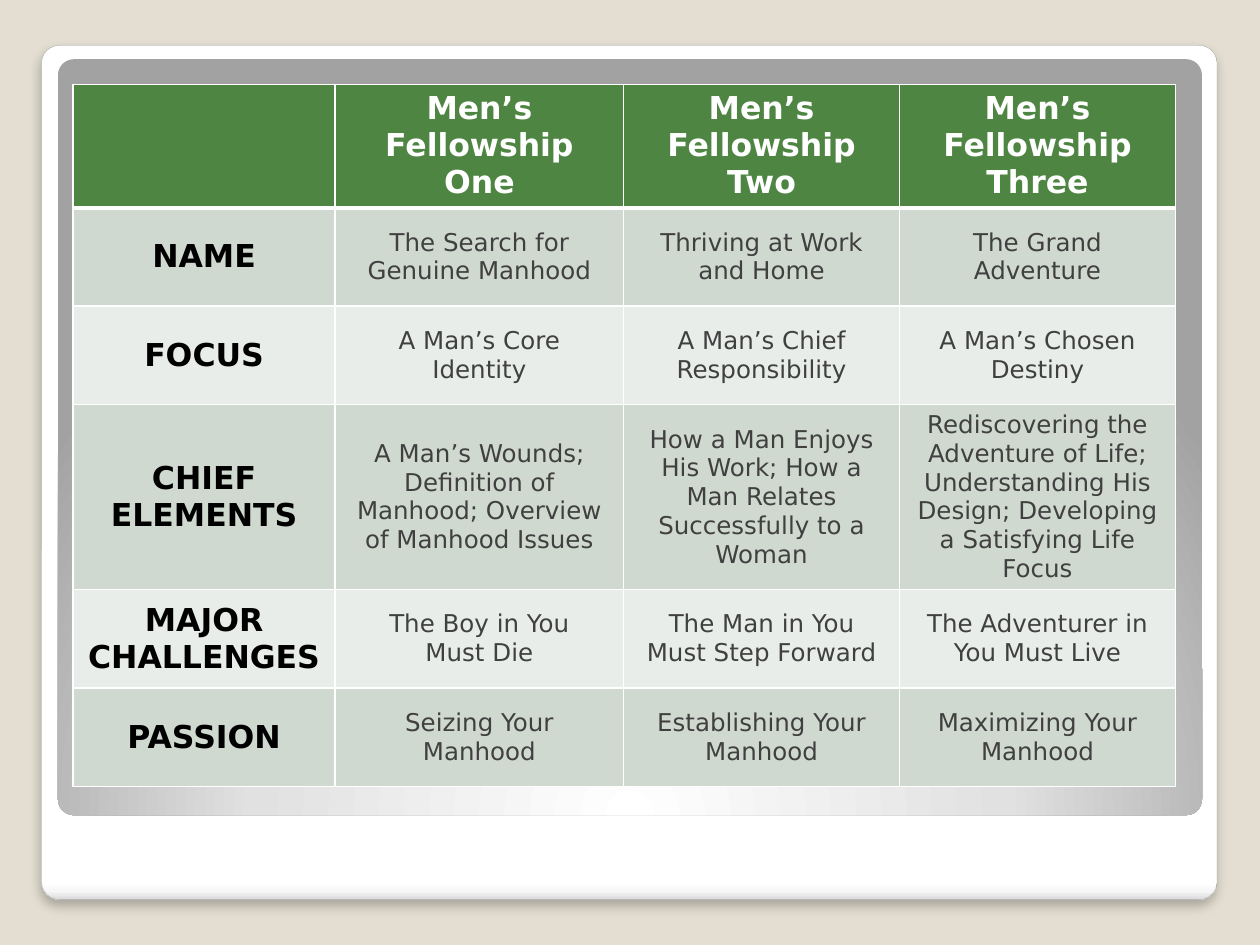
from dataclasses import dataclass
from typing import Optional

from lxml import etree
from pptx import Presentation
from pptx.dml.color import RGBColor
from pptx.enum import shapes, text
from pptx.oxml import ns
from pptx.util import Inches, Pt

BACKGROUND = RGBColor(0xE3, 0xDE, 0xD1)
WHITE = RGBColor(0xFF, 0xFF, 0xFF)
BLACK = RGBColor(0x00, 0x00, 0x00)
SHADE = RGBColor(0xDA, 0xDA, 0xDA)
PALE_GRAY = RGBColor(0xF7, 0xF7, 0xF7)
LIGHT_GRAY = RGBColor(0xE1, 0xE1, 0xE1)
MID_GRAY = RGBColor(0xA2, 0xA2, 0xA2)
OUTLINE = RGBColor(0xA4, 0xA4, 0xA4)
GREEN = RGBColor(0x4E, 0x85, 0x42)
DARK_BAND = RGBColor(0xD0, 0xD9, 0xCF)
LIGHT_BAND = RGBColor(0xE9, 0xED, 0xE9)
BODY_TEXT = RGBColor(0x40, 0x40, 0x40)

FONT = "DejaVu Sans"
COLUMN_WIDTHS = [2.08, 2.29, 2.19, 2.19]
ROW_HEIGHTS = [0.98, 0.78, 0.78, 1.47, 0.78, 0.78]
ROWS = [
    ["", "Men’s Fellowship\nOne", "Men’s Fellowship\nTwo", "Men’s Fellowship\nThree"],
    ["NAME", "The Search for Genuine Manhood", "Thriving at Work and Home", "The Grand Adventure"],
    ["FOCUS", "A Man’s Core Identity", "A Man’s Chief Responsibility", "A Man’s Chosen Destiny"],
    ["CHIEF ELEMENTS",
     "A Man’s Wounds; Definition of Manhood; Overview of Manhood Issues",
     "How a Man Enjoys His Work; How a Man Relates Successfully to a Woman",
     "Rediscovering the Adventure of Life; Understanding His Design; "
     "Developing a Satisfying Life Focus"],
    ["MAJOR CHALLENGES", "The Boy in You\nMust Die", "The Man in You Must Step Forward",
     "The Adventurer in You Must Live"],
    ["PASSION", "Seizing Your Manhood", "Establishing Your Manhood", "Maximizing Your Manhood"],
]


@dataclass
class Panel:
    left: float
    top: float
    width: float
    height: float
    stops: list[tuple[int, RGBColor]]
    direction: str
    outline: Optional[RGBColor] = None
    shadow: bool = False


@dataclass
class CellStyle:
    fill: RGBColor
    color: RGBColor
    size: int
    bold: bool
    anchor: text.MSO_ANCHOR
    bottom_line: float = 1


LINEAR = '<a:lin ang="5400000" scaled="0"/>'
RADIAL = ('<a:path path="circle"><a:fillToRect l="50000" t="175000" '
          'r="50000" b="-75000"/></a:path>')
SHADOW = ('<a:outerShdw blurRad="76200" dist="50800" dir="5400000" rotWithShape="0">'
          '<a:srgbClr val="000000"><a:alpha val="25000"/></a:srgbClr></a:outerShdw>')
PANELS = [
    Panel(0.33, 0.36, 9.33, 6.78,
          [(0, WHITE), (98, WHITE), (99, PALE_GRAY), (100, SHADE)], LINEAR, OUTLINE, True),
    Panel(0.46, 0.47, 9.08, 6,
          [(0, WHITE), (55, LIGHT_GRAY), (100, MID_GRAY)], RADIAL),
]


def element(markup: str):
    head, tail = markup.split(">", 1)
    slash = "/" if head.endswith("/") else ""
    return etree.fromstring(f'{head.rstrip("/")} {ns.nsdecls("a")}{slash}>{tail}')


def draw_panel(page, panel: Panel) -> None:
    box = page.shapes.add_shape(
        shapes.MSO_SHAPE.ROUNDED_RECTANGLE, Inches(panel.left), Inches(panel.top),
        Inches(panel.width), Inches(panel.height))
    box.adjustments[0] = 0.021
    box.shadow.inherit = False
    if panel.outline is None:
        box.line.fill.background()
    else:
        box.line.color.rgb = panel.outline
        box.line.width = Pt(0.16)
    stops = "".join(f'<a:gs pos="{place * 1000}"><a:srgbClr val="{color}"/></a:gs>'
                    for place, color in panel.stops)
    properties = box._element.spPr
    geometry = properties.find(ns.qn("a:prstGeom"))
    geometry.addnext(element(f'<a:gradFill rotWithShape="1"><a:gsLst>{stops}</a:gsLst>'
                             f'{panel.direction}</a:gradFill>'))
    if panel.shadow:
        effects = properties.find(ns.qn("a:effectLst"))
        effects.append(element(SHADOW))


def style_for(row: int, column: int) -> CellStyle:
    if row == 0:
        return CellStyle(GREEN, WHITE, 18, True, text.MSO_ANCHOR.TOP, 3)
    band = DARK_BAND if row % 2 else LIGHT_BAND
    if column == 0:
        return CellStyle(band, BLACK, 18, True, text.MSO_ANCHOR.MIDDLE)
    return CellStyle(band, BODY_TEXT, 14, False, text.MSO_ANCHOR.MIDDLE)


def set_borders(cell, top: float, bottom: float) -> None:
    properties = cell._tc.get_or_add_tcPr()
    widths = {"lnL": 1, "lnR": 1, "lnT": top, "lnB": bottom}
    for position, (side, width) in enumerate(widths.items()):
        properties.insert(position, element(
            f'<a:{side} w="{Pt(width)}"><a:solidFill><a:srgbClr val="{WHITE}"/>'
            f'</a:solidFill></a:{side}>'))


def fill_cell(cell, wording: str, style: CellStyle, top_line: float) -> None:
    cell.text_frame.text = wording
    cell.vertical_anchor = style.anchor
    cell.fill.solid()
    cell.fill.fore_color.rgb = style.fill
    for para in cell.text_frame.paragraphs:
        para.alignment = text.PP_ALIGN.CENTER
        for span in para.runs:
            span.font.name = FONT
            span.font.size = Pt(style.size)
            span.font.bold = style.bold
            span.font.color.rgb = style.color
    set_borders(cell, top_line, style.bottom_line)


def draw_table(page) -> None:
    grid = page.shapes.add_table(
        len(ROWS), len(COLUMN_WIDTHS), Inches(0.58), Inches(0.67),
        Inches(sum(COLUMN_WIDTHS)), Inches(sum(ROW_HEIGHTS))).table
    for column, width in zip(grid.columns, COLUMN_WIDTHS):
        column.width = Inches(width)
    for row, height in zip(grid.rows, ROW_HEIGHTS):
        row.height = Inches(height)
    for row, wordings in enumerate(ROWS):
        for column, wording in enumerate(wordings):
            top_line = 3 if row == 1 else 1
            fill_cell(grid.cell(row, column), wording, style_for(row, column), top_line)


def main() -> None:
    deck = Presentation()
    deck.slide_width = Inches(10)
    deck.slide_height = Inches(7.5)
    page = deck.slides.add_slide(deck.slide_layouts[6])
    page.background.fill.solid()
    page.background.fill.fore_color.rgb = BACKGROUND
    for panel in PANELS:
        draw_panel(page, panel)
    draw_table(page)
    deck.save("out.pptx")


if __name__ == "__main__":
    main()
